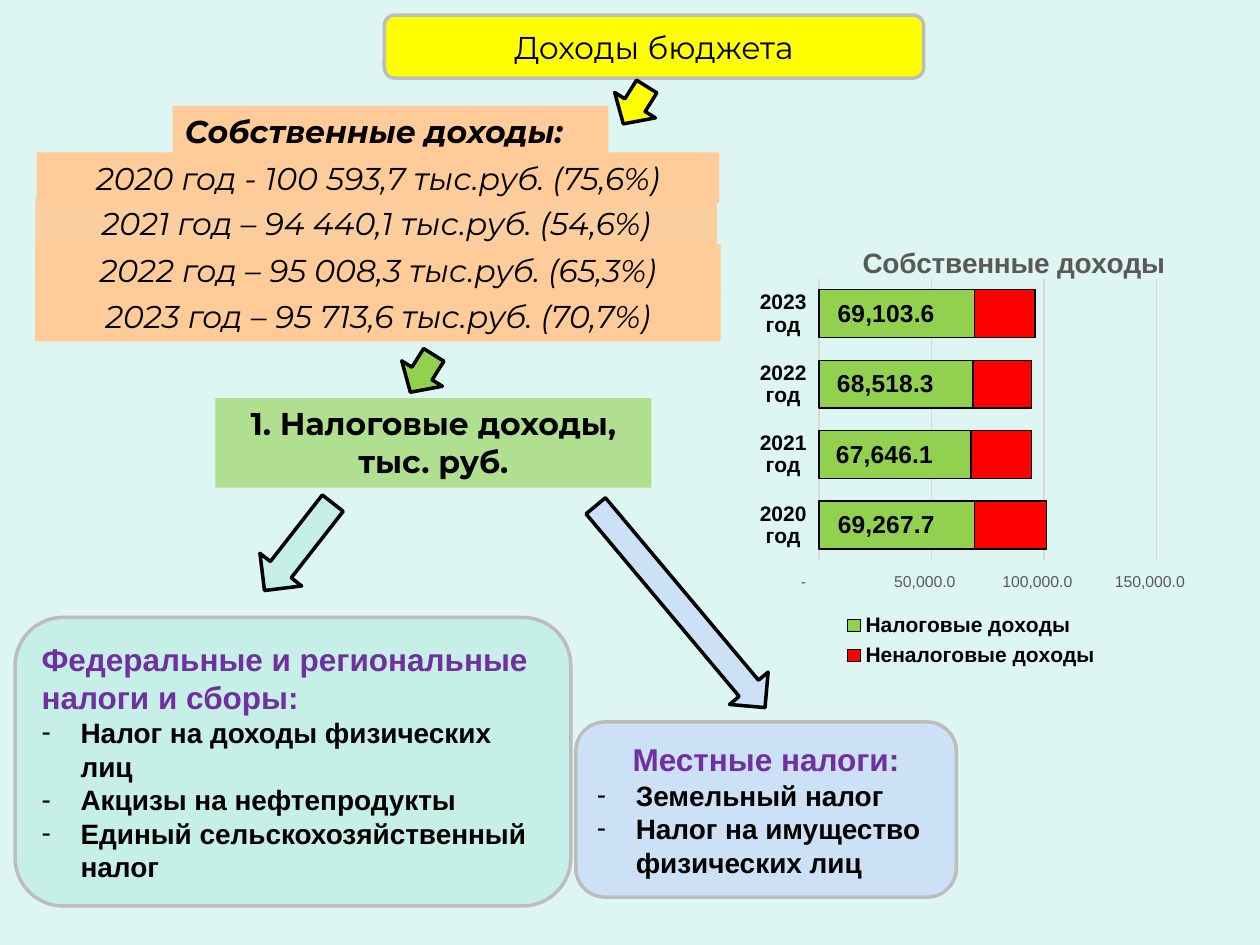
from lxml import etree
from pptx import Presentation
from pptx.chart.data import CategoryChartData
from pptx.dml.color import RGBColor
from pptx.enum.chart import XL_CHART_TYPE, XL_LEGEND_POSITION, XL_TICK_MARK
from pptx.enum.shapes import MSO_SHAPE
from pptx.enum.text import MSO_ANCHOR, MSO_AUTO_SIZE, PP_ALIGN
from pptx.oxml.ns import qn
from pptx.util import Inches, Pt

RECT, ROUND, DOWN = MSO_SHAPE.RECTANGLE, MSO_SHAPE.ROUNDED_RECTANGLE, MSO_SHAPE.DOWN_ARROW
BARS = XL_CHART_TYPE.BAR_STACKED
BOTTOM = XL_LEGEND_POSITION.BOTTOM
OUT = XL_TICK_MARK.OUTSIDE
MIDDLE, TOP = MSO_ANCHOR.MIDDLE, MSO_ANCHOR.TOP
GROW, FIXED = MSO_AUTO_SIZE.SHAPE_TO_FIT_TEXT, MSO_AUTO_SIZE.NONE
LEFT, CENTER = PP_ALIGN.LEFT, PP_ALIGN.CENTER

BLACK, GREY, PURPLE = "000000", "BDBDBD", "7030A0"
PEACH, GREEN, YELLOW = "FFCC99", "92D050", "FFFF00"
MINT, BLUE, RED = "C6F0E7", "CCE1F5", "FF0000"
NUMBER = '_-* #,##0.0_р_._-;\\-* #,##0.0_р_._-;_-* "-"??_р_._-;_-@_-'


def color(code):
    return RGBColor.from_string(code)


def style(font, size, code=BLACK, name="Arial", bold=False, italic=False):
    font.size, font.name, font.bold, font.italic = Pt(size), name, bold, italic
    font.color.rgb = color(code)


def draw(slide, kind, box, fill, line=None, alpha=100, turn=0):
    shape = slide.shapes.add_shape(kind, *map(Inches, box))
    shape.shadow.inherit = False
    shape.rotation = turn
    shape.fill.solid()
    shape.fill.fore_color.rgb = color(fill)
    if alpha < 100:
        tone = shape._element.spPr.find(".//" + qn("a:srgbClr"))
        etree.SubElement(tone, qn("a:alpha")).set("val", str(alpha * 1000))
    if line:
        shape.line.color.rgb = color(line)
        shape.line.width = Pt(2)
    else:
        shape.line.fill.background()
    return shape


def head(slide, box):
    """Title text on a rounded yellow plate."""
    plate = draw(slide, ROUND, box, YELLOW, GREY)
    slide.shapes._spTree.insert(2, plate._element)
    title = slide.shapes.title
    title.left, title.top, title.width, title.height = map(Inches, box)
    frame = title.text_frame
    frame.text = "Доходы бюджета"
    frame.auto_size = FIXED
    frame.vertical_anchor = MIDDLE
    para = frame.paragraphs[0]
    para.alignment = CENTER
    style(para.runs[0].font, 18, name="Montserrat")


def band(slide, box, text, fill=PEACH, alpha=100, align=CENTER, bold=False, italic=True):
    shape = draw(slide, RECT, box, fill, alpha=alpha)
    frame = shape.text_frame
    frame.text = text
    frame.word_wrap = True
    frame.auto_size = GROW
    frame.vertical_anchor = TOP
    para = frame.paragraphs[0]
    para.alignment = align
    style(para.runs[0].font, 18, name="Montserrat", bold=bold, italic=italic)


def dash(para):
    """Give the paragraph a hanging dash bullet."""
    props = para._p.get_or_add_pPr()
    props.set("marL", str(Inches(0.31)))
    props.set("indent", str(-Inches(0.31)))
    etree.SubElement(props, qn("a:buFont")).set("typeface", "Arial")
    etree.SubElement(props, qn("a:buChar")).set("char", "-")


def card(slide, box, fill, title, items, align=LEFT):
    frame = draw(slide, ROUND, box, fill, GREY).text_frame
    frame.word_wrap = True
    frame.vertical_anchor = MIDDLE
    frame.text = "\n".join([title, *items])
    first, *rest = frame.paragraphs
    first.alignment = align
    style(first.runs[0].font, 18, PURPLE, bold=True)
    for para in rest:
        para.alignment = LEFT
        dash(para)
        style(para.runs[0].font, 16, bold=True)


def place(part, index, box, inner=False):
    """Lay out a chart part by fractions of the chart's size."""
    for old in part.findall(qn("c:layout")):
        part.remove(old)
    layout = etree.Element(qn("c:layout"))
    manual = etree.SubElement(layout, qn("c:manualLayout"))
    pairs = [("layoutTarget", "inner")] if inner else []
    pairs += [("xMode", "edge"), ("yMode", "edge"), *zip("xywh", box)]
    for tag, value in pairs:
        etree.SubElement(manual, qn("c:" + tag)).set("val", str(value))
    part.insert(index, layout)


def graph(slide, box):
    data = CategoryChartData(number_format=NUMBER)
    data.categories = [f"{year} год" for year in range(2020, 2024)]
    data.add_series("Налоговые доходы", [69267.7, 67646.1, 68518.3, 69103.6])
    data.add_series("Неналоговые доходы", [32000, 27000, 26000, 27000])
    chart = slide.shapes.add_chart(BARS, *map(Inches, box), data).chart
    style(chart.font, 10)

    title = chart.chart_title
    title.text_frame.text = "Собственные доходы"
    style(title.text_frame.paragraphs[0].runs[0].font, 16, "595959", bold=True)
    title.include_in_layout = False
    place(title._element, 1, (0.24, 0.01))

    chart.has_legend = True
    legend = chart.legend
    legend.position = BOTTOM
    legend.include_in_layout = False
    style(legend.font, 12, bold=True)
    place(legend._element, 1, (0.2, 0.82, 0.57, 0.15))

    plot = chart.plots[0]
    plot.gap_width, plot.overlap = 47, 100
    plot.vary_by_categories = False
    place(chart._chartSpace.chart.plotArea, 0, (0.157, 0.095, 0.726, 0.623), True)
    for series, fill in zip(plot.series, (GREEN, RED)):
        series.format.fill.solid()
        series.format.fill.fore_color.rgb = color(fill)
        series.format.line.color.rgb = color(BLACK)
        series.format.line.width = Pt(0.75)
    labels = plot.series[0].data_labels
    labels.show_value = True
    labels.number_format, labels.number_format_is_linked = NUMBER, False
    style(labels.font, 14, bold=True)

    names, scale = chart.category_axis, chart.value_axis
    for axis in (names, scale):
        axis.major_tick_mark = OUT
        axis.format.line.fill.background()
    style(names.tick_labels.font, 12, bold=True)
    style(scale.tick_labels.font, 9, "595959")
    scale.tick_labels.number_format = NUMBER
    scale.tick_labels.number_format_is_linked = False
    scale.minimum_scale, scale.maximum_scale, scale.major_unit = 0, 150000, 50000
    grid = scale.major_gridlines.format.line
    grid.color.rgb = color("D9D9D9")
    grid.width = Pt(0.75)


def main():
    deck = Presentation()
    deck.slide_width, deck.slide_height = Inches(10), Inches(7.5)
    slide = deck.slides.add_slide(deck.slide_layouts[5])
    slide.background.fill.solid()
    slide.background.fill.fore_color.rgb = color("DEF6F1")

    head(slide, (3.05, 0.12, 4.28, 0.5))
    card(slide, (0.12, 4.9, 4.41, 2.29), MINT, "Федеральные и региональные налоги и сборы:",
         ["Налог на доходы физических лиц", "Акцизы на нефтепродукты",
          "Единый сельскохозяйственный налог"])
    card(slide, (4.57, 5.73, 3.02, 1.39), BLUE, "Местные налоги:",
         ["Земельный налог", "Налог на имущество физических лиц"], CENTER)

    arrows = [((3.16, 2.79, 0.38, 0.35), GREEN, 32), ((5.2, 3.77, 0.4, 2.09), BLUE, 320),
              ((2.16, 3.9, 0.42, 0.88), MINT, 38), ((4.85, 0.66, 0.38, 0.35), YELLOW, 32)]
    for box, fill, turn in arrows:
        draw(slide, DOWN, box, fill, BLACK, turn=turn)

    band(slide, (1.37, 0.84, 3.46, 0.4), "Собственные доходы:", align=LEFT, bold=True)
    years = [(0.29, 1.21, 5.42, 100, "2020 год - 100 593,7 тыс.руб. (75,6%)"),
             (0.28, 1.57, 5.41, 95, "2021 год – 94 440,1 тыс.руб. (54,6%)"),
             (0.28, 1.94, 5.44, 100, "2022 год – 95 008,3 тыс.руб. (65,3%)"),
             (0.28, 2.31, 5.44, 100, "2023 год – 95 713,6 тыс.руб. (70,7%)")]
    for left, top, width, alpha, text in years:
        band(slide, (left, top, width, 0.4), text, alpha=alpha)
    band(slide, (1.71, 3.16, 3.46, 0.71), "1. Налоговые доходы, тыс. руб.", GREEN, 60,
         bold=True, italic=False)
    graph(slide, (5.92, 1.87, 3.69, 3.59))
    deck.save("out.pptx")


if __name__ == "__main__":
    main()
